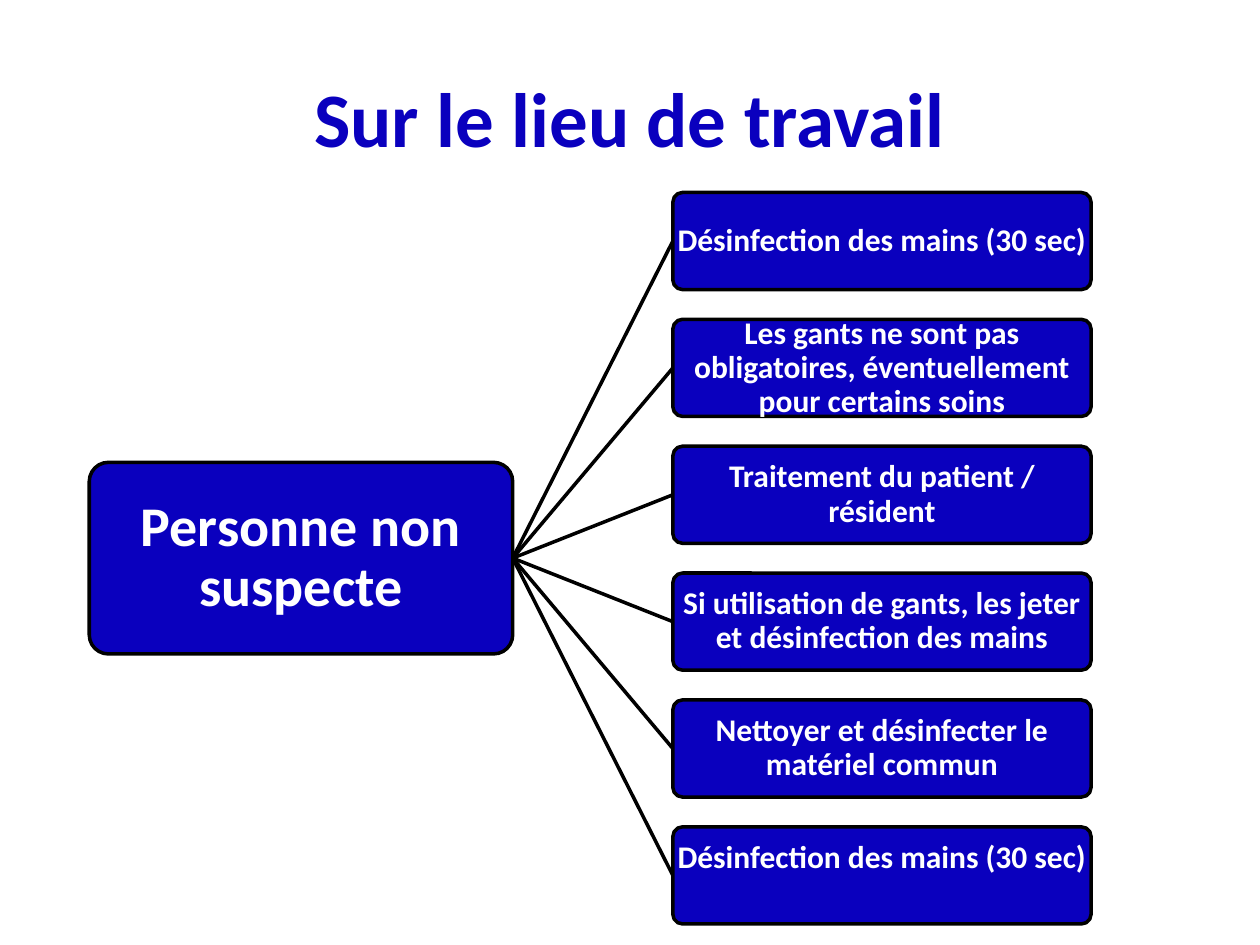
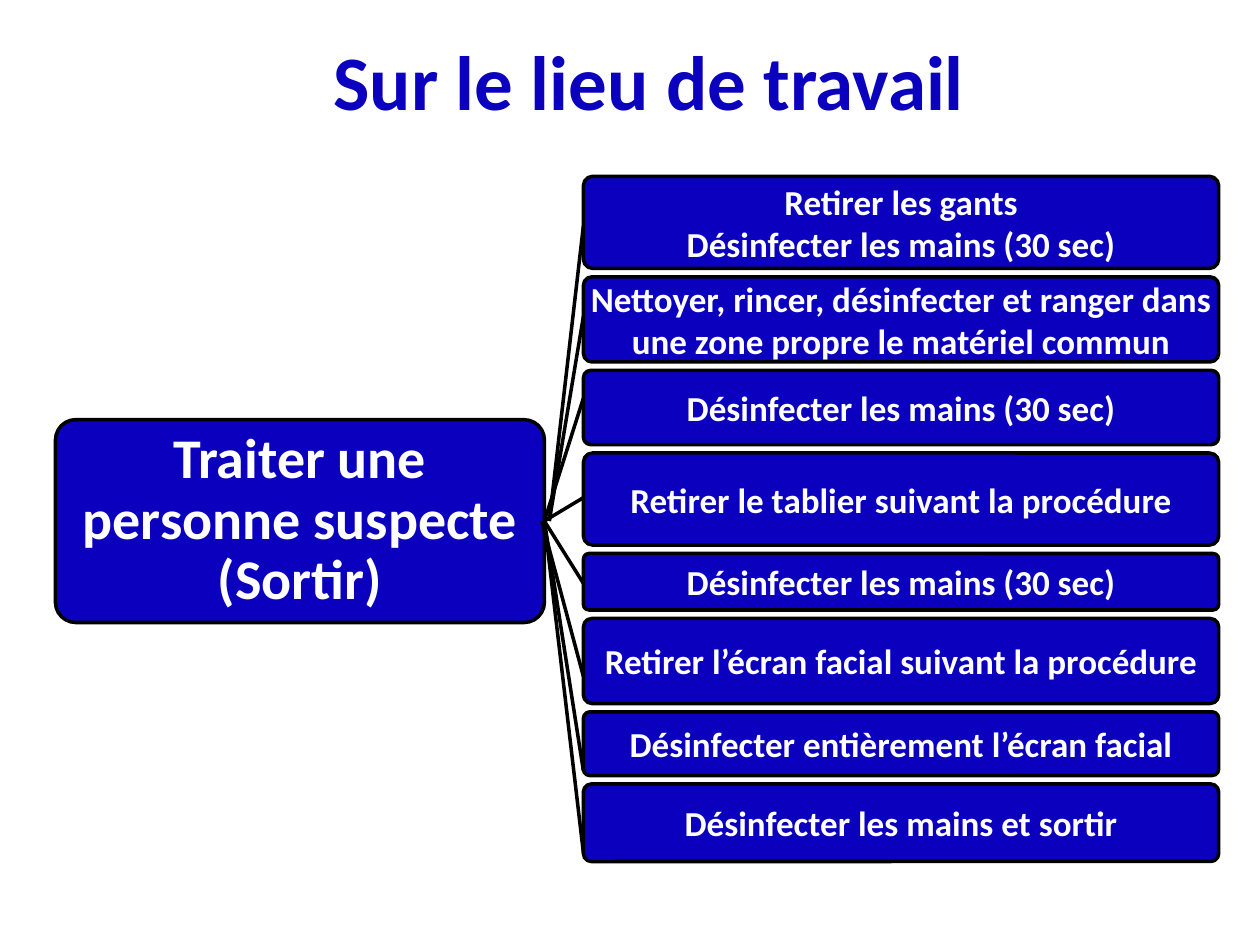
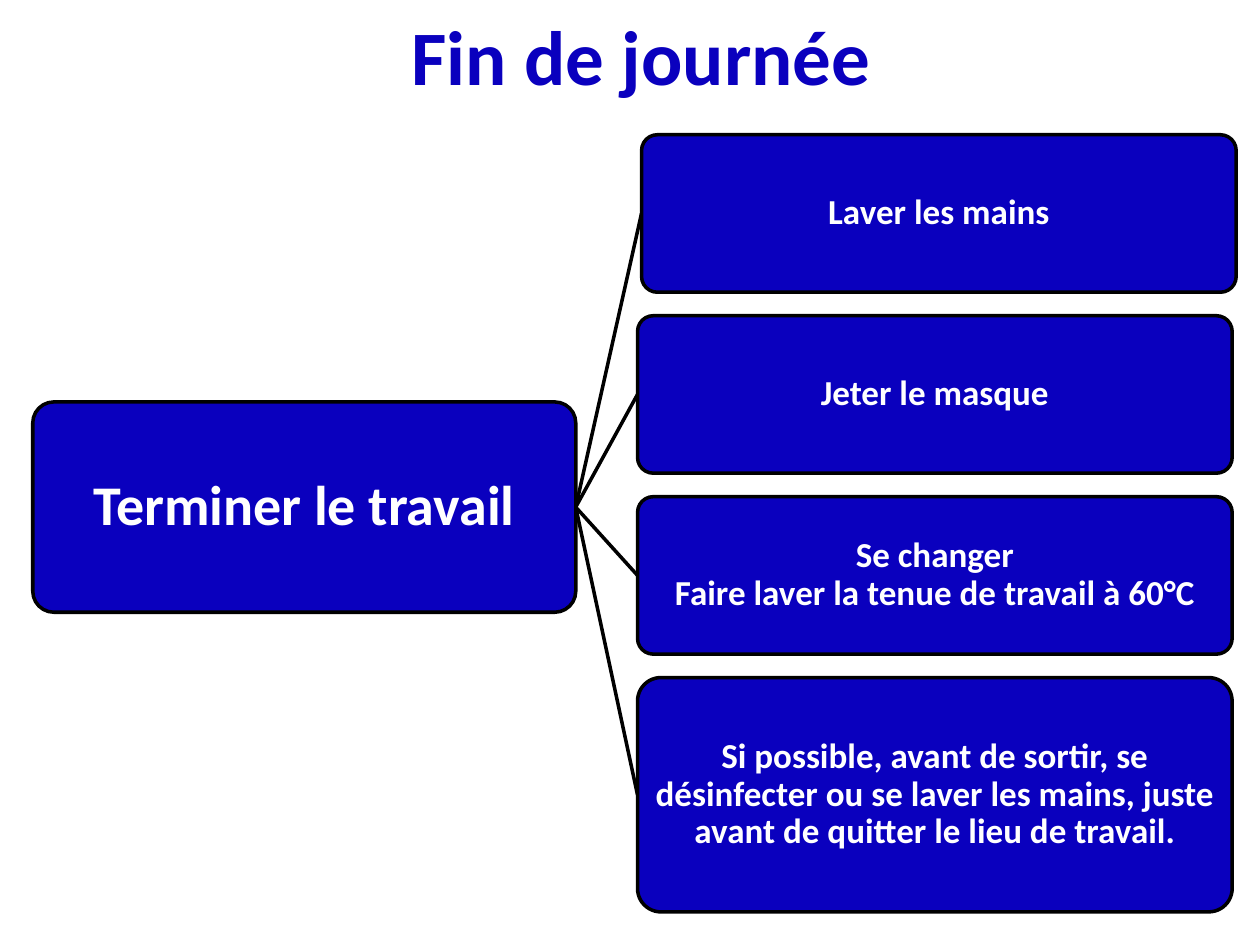
from dataclasses import dataclass
from typing import NamedTuple

from lxml.etree import SubElement
from pptx import Presentation
from pptx.dml.color import RGBColor
from pptx.enum.shapes import MSO_CONNECTOR, MSO_SHAPE
from pptx.enum.text import MSO_ANCHOR, PP_ALIGN
from pptx.oxml.ns import qn
from pptx.util import Pt


@dataclass(frozen=True)
class Theme:
    blue: RGBColor = RGBColor(0x0A, 0x00, 0xBE)
    white: RGBColor = RGBColor(0xFF, 0xFF, 0xFF)
    black: RGBColor = RGBColor(0x00, 0x00, 0x00)
    font: str = "Calibri"
    title_size: float = 44
    root_size: float = 32
    line_width: float = 2
    corner: float = 0.1


THEME = Theme()


class Box(NamedTuple):
    left: float
    top: float
    width: float
    height: float

    @property
    def middle(self) -> float:
        return self.top + self.height / 2


class Step(NamedTuple):
    text: str
    height: float
    link_y: float | None = None  # where the link arrives, box middle if None
    start_dx: float = 0  # shift of the link's start from the root's edge
    dx: float = 0  # shift of the box from the column
    bottom_inset: float = 0


class Diagram(NamedTuple):
    title: str
    title_box: Box
    root: str
    root_box: Box
    left: float
    top: float
    width: float
    gap: float
    size: float
    spacing: float
    steps: list[Step]


HANDS = "Désinfecter les mains (30 sec)"
WORKPLACE = "Sur le lieu de travail"

DIAGRAMS = [
    Diagram(
        WORKPLACE, Box(36, 21.6, 648, 90),
        "Personne non suspecte", Box(51, 264.2, 242, 109.5),
        left=384.5, top=110, width=239, gap=17, size=18, spacing=0.9,
        steps=[
            Step("Désinfection des mains (30 sec)", 55.5),
            Step("Les gants ne sont pas obligatoires, éventuellement pour certains soins", 55.5),
            Step("Traitement du patient / résident", 55.5),
            Step("Si utilisation de gants, les jeter et désinfection des mains", 55.5),
            Step("Nettoyer et désinfecter le matériel commun", 55.5),
            Step("Désinfection des mains (30 sec)", 55.5, bottom_inset=20),
        ],
    ),
    Diagram(
        WORKPLACE, Box(127.4, 0.7, 487.4, 90),
        "Traiter une personne suspecte (Sortir)", Box(31.7, 239.8, 279.4, 115.9),
        left=333.4, top=100.8, width=363, gap=4.8, size=20, spacing=1.0,
        steps=[
            Step("Retirer les gants\vDésinfecter les mains (30 sec)", 52.6, 129, 2.8),
            Step("Nettoyer, rincer, désinfecter et ranger dans une zone propre le matériel commun",
                 48.6, 180.7, 2.8),
            Step(HANDS, 42.5, 227.5),
            Step("Retirer le tablier suivant la procédure", 52.6, 284.4),
            Step(HANDS, 32.3, 333.4),
            Step("Retirer l’écran facial suivant la procédure", 48.6, 386.6, -1.5),
            Step("Désinfecter entièrement l’écran facial", 36.4, 440.6),
            Step("Désinfecter les mains et sortir", 44.3, 487.4),
        ],
    ),
    Diagram(
        "Fin de journée", Box(42.5, 0, 648, 62.6),
        "Terminer le travail", Box(18.7, 229.7, 310.3, 120.2),
        left=364.3, top=77, width=339.8, gap=13.4, size=20, spacing=0.9,
        steps=[
            Step("Laver les mains", 90, dx=2.3),
            Step("Jeter le masque", 90),
            Step("Se changer\vFaire laver la tenue de travail à 60°C", 90),
            Step("Si possible, avant de sortir, se désinfecter ou se laver les mains, "
                 "juste avant de quitter le lieu de travail.", 133.9),
        ],
    ),
]


def set_all(target, values: dict) -> None:
    for name, value in values.items():
        setattr(target, name, value)


def write(sp, text: str, size: float, color: RGBColor, spacing: float = 1.0,
          side: float = 0, bottom: float = 0) -> None:
    """Put centred bold text in a shape; a vertical tab breaks the line."""
    tf = sp.text_frame
    set_all(tf, {
        "word_wrap": True, "vertical_anchor": MSO_ANCHOR.MIDDLE,
        "margin_left": Pt(side), "margin_right": Pt(side),
        "margin_top": 0, "margin_bottom": Pt(bottom),
    })
    p = tf.paragraphs[0]
    set_all(p, {"text": text, "alignment": PP_ALIGN.CENTER, "line_spacing": spacing})
    for r in p.runs:
        set_all(r.font, {"name": THEME.font, "size": Pt(size), "bold": True})
        r.font.color.rgb = color


def set_line(sp) -> None:
    sp.line.color.rgb = THEME.black
    sp.line.width = Pt(THEME.line_width)


def add_box(s, box: Box, text: str, size: float, **layout: float) -> None:
    sp = s.shapes.add_shape(MSO_SHAPE.ROUNDED_RECTANGLE, *map(Pt, box))
    sp.shadow.inherit = False
    sp.adjustments[0] = THEME.corner
    sp.fill.solid()
    sp.fill.fore_color.rgb = THEME.blue
    set_line(sp)
    write(sp, text, size, THEME.white, **layout)


def add_link(s, x1: float, y1: float, x2: float, y2: float) -> None:
    sp = s.shapes.add_connector(MSO_CONNECTOR.STRAIGHT, *map(Pt, (x1, y1, x2, y2)))
    set_line(sp)
    SubElement(sp._element.spPr, qn("a:effectLst"))


def add_diagram(prs, d: Diagram) -> None:
    s = prs.slides.add_slide(prs.slide_layouts[6])
    root = d.root_box
    add_box(s, root, d.root, THEME.root_size, spacing=0.9, side=3)
    top = d.top
    for step in d.steps:
        box = Box(d.left + step.dx, top, d.width, step.height)
        link_y = box.middle if step.link_y is None else step.link_y
        add_link(s, root.left + root.width + step.start_dx, root.middle, box.left, link_y)
        add_box(s, box, step.text, d.size, spacing=d.spacing, bottom=step.bottom_inset)
        top += step.height + d.gap
    title = s.shapes.add_textbox(*map(Pt, d.title_box))
    write(title, d.title, THEME.title_size, THEME.blue)


def main() -> None:
    prs = Presentation()
    set_all(prs, {"slide_width": Pt(720), "slide_height": Pt(540)})
    for d in DIAGRAMS:
        add_diagram(prs, d)
    prs.save("out.pptx")


if __name__ == "__main__":
    main()
